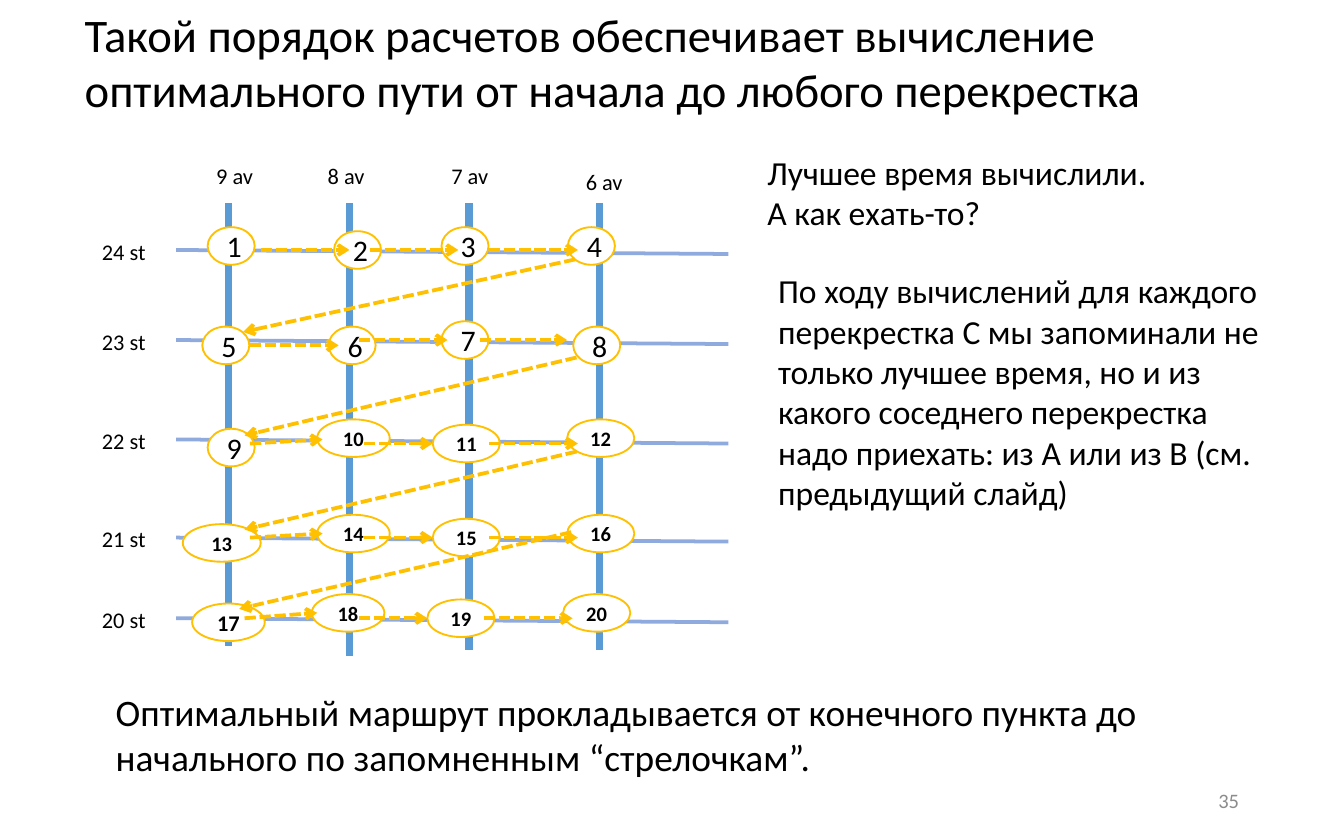
import pptx
import pptx.util
import pptx.dml.color
import pptx.enum.dml
import pptx.enum.shapes
import pptx.enum.text
import lxml.etree

RGB = pptx.dml.color.RGBColor
BLACK = RGB(0, 0, 0)
WHITE = RGB(255, 255, 255)
GREY = RGB(0x8C, 0x8C, 0x8C)
BLUE = RGB(0x5B, 0x9B, 0xD5)
PALE = RGB(0x8F, 0xAA, 0xDC)
GOLD = RGB(0xFF, 0xC0, 0)
ALIGN = pptx.enum.text.PP_ALIGN
MIDDLE = pptx.enum.text.MSO_ANCHOR.MIDDLE
PAD = (0.09, 0.04)

TEXTS = [
    ("Такой порядок расчетов обеспечивает вычисление оптимального пути "
     "от начала до любого перекрестка", (0.54, 0, 8.92, 0.93), 25),
    ("Лучшее время вычислили.\nА как ехать-то?", (5.62, 1.09, 3.8, 0.7), 18),
    ("По ходу вычислений для каждого перекрестка C мы запоминали не только "
     "лучшее время, но и из какого соседнего перекрестка надо приехать: "
     "из A или из B (см. предыдущий слайд)", (5.7, 1.97, 3.8, 1.91), 18),
    ("Оптимальный маршрут прокладывается от конечного пункта до начального "
     "по запомненным “стрелочкам”.", (0.77, 5.09, 8.45, 0.76), 20),
]
PAGE = ("35", (7.06, 5.79, 2.25, 0.33), 11)

AVENUES = [("9 av", 1.7, 4.81, 1.51, 1.16), ("8 av", 2.6, 4.88, 2.34, 1.16),
           ("7 av", 3.49, 4.84, 3.26, 1.16), ("6 av", 4.46, 4.84, 4.26, 1.2)]
STREETS = [("24 st", 1.86), ("23 st", 2.53), ("22 st", 3.27),
           ("21 st", 4.0), ("20 st", 4.6)]
TOP, WEST, EAST, DROP = 1.51, 1.31, 5.42, 0.03

NUDGES = [
    [(0.02, -0.03), (0.06, 0), (-0.03, -0.03), (-0.06, -0.03)],
    [(-0.02, 0.04), (0.02, 0.04), (-0.03, 0), (-0.02, 0.04)],
    [(0.02, 0.06), (0.03, -0.01), (-0.02, 0.03), (0.01, -0.01)],
    [(-0.05, 0.04), (0.03, -0.03), (-0.02, 0), (0.01, -0.03)],
    [(0, 0.03), (-0.01, -0.04), (-0.06, 0), (-0.02, -0.04)],
]
WIDE = [0.54, 0.54, 0.5, 0.5]
SMALL, HIGH = 0.35, 0.28

STEPS = [
    [(1.94, 0, 2.6, 0), (2.75, 0, 3.41, 0), (3.64, 0, 4.3, 0)],
    [(1.86, 0.04, 2.52, 0.04), (2.67, 0, 3.33, 0), (3.57, 0, 4.22, 0)],
    [(1.86, 0.03, 2.4, 0), (2.71, 0.03, 3.22, 0.03), (3.64, 0.03, 4.3, 0.03)],
    [(1.86, 0, 2.4, -0.03), (2.71, 0, 3.22, 0), (3.64, 0, 4.3, 0)],
    [(1.82, 0, 2.36, -0.04), (2.67, 0, 3.18, 0), (3.6, 0, 4.26, 0)],
]
RETURNS = [(4.28, 1.93, 1.81, 2.47), (4.29, 2.66, 1.82, 3.24),
           (4.29, 3.36, 1.82, 3.94), (4.25, 3.96, 1.78, 4.53)]

deck = pptx.Presentation()
deck.slide_width = pptx.util.Inches(10)
deck.slide_height = pptx.util.Inches(6.25)
slide = deck.slides.add_slide(deck.slide_layouts[6])
shapes = slide.shapes


def inch(vals):
    return [pptx.util.Inches(val) for val in vals]


def write(shape, text, size, color=BLACK, bold=False, align=ALIGN.LEFT,
          pad=PAD, wrap=True):
    frame = shape.text_frame
    frame.text = text
    frame.word_wrap = wrap
    frame.margin_left = frame.margin_right = pptx.util.Inches(pad[0])
    frame.margin_top = frame.margin_bottom = pptx.util.Inches(pad[1])
    for par in frame.paragraphs:
        par.alignment = align
        for run in par.runs:
            run.font.name = "Calibri"
            run.font.size = pptx.util.Pt(size)
            run.font.bold = bold
            run.font.color.rgb = color
    return frame


def label(text, left, top, width):
    box = shapes.add_textbox(*inch((left, top, width, 0.3)))
    write(box, text, 12, pad=(0.1, 0.05), wrap=False)


def line(ends, color, width):
    link = shapes.add_connector(
        pptx.enum.shapes.MSO_CONNECTOR.STRAIGHT, *inch(ends))
    link.line.color.rgb = color
    link.line.width = pptx.util.Pt(width)
    props = link._element.spPr
    lxml.etree.SubElement(props, pptx.oxml.ns.qn("a:effectLst"))
    return link


def arrow(ends):
    link = line(ends, GOLD, 2)
    link.line.dash_style = pptx.enum.dml.MSO_LINE.SQUARE_DOT
    tail = lxml.etree.SubElement(
        link.line._get_or_add_ln(), pptx.oxml.ns.qn("a:tailEnd"))
    tail.set("type", "arrow")


def node(num, x, y, width):
    oval = shapes.add_shape(
        pptx.enum.shapes.MSO_SHAPE.OVAL,
        *inch((x - width / 2, y - HIGH / 2, width, HIGH)))
    oval.shadow.inherit = False
    oval.fill.solid()
    oval.fill.fore_color.rgb = WHITE
    oval.line.color.rgb = GOLD
    oval.line.width = pptx.util.Pt(1)
    size = 16 if num < 10 else 12 if num == 17 else 11
    frame = write(oval, str(num), size, bold=num > 9, align=ALIGN.CENTER)
    frame.vertical_anchor = MIDDLE


for text, place, size in TEXTS:
    write(shapes.add_textbox(*inch(place)), text, size)

for name, x, end, left, top in AVENUES:
    line((x, TOP, x, end), BLUE, 4)
    label(name, left, top, 0.48)
for name, y in STREETS:
    line((WEST, y, EAST, y + DROP), PALE, 2)
    label(name, 0.66, y - 0.14, 0.53)

for row, (street, nudges) in enumerate(zip(STREETS, NUDGES)):
    for col, (dx, dy) in enumerate(nudges):
        num = row * len(AVENUES) + col + 1
        width = SMALL if num < 10 else 0.58 if num == 13 else WIDE[col]
        node(num, AVENUES[col][1] + dx, street[1] + dy, width)

for (name, y), steps in zip(STREETS, STEPS):
    for start, rise, stop, fall in steps:
        arrow((start, y + rise, stop, y + fall))
for ends in RETURNS:
    arrow(ends)

text, place, size = PAGE
frame = write(shapes.add_textbox(*inch(place)), text, size, GREY,
              align=ALIGN.RIGHT)
frame.vertical_anchor = MIDDLE

deck.save("out.pptx")
